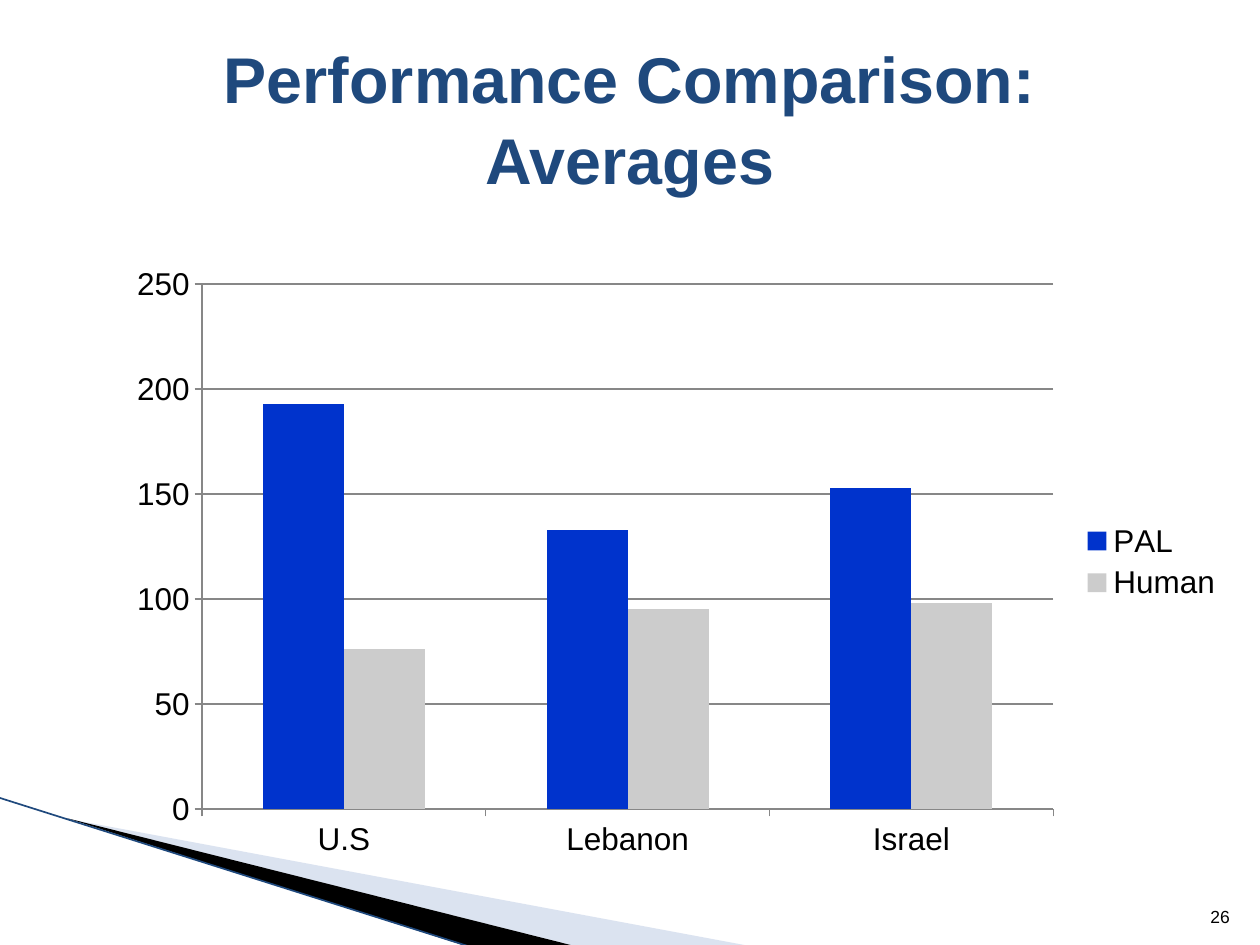
from lxml import etree
from pptx import Presentation
from pptx.chart.data import CategoryChartData
from pptx.dml.color import RGBColor
from pptx.enum.chart import XL_CHART_TYPE, XL_LEGEND_POSITION, XL_TICK_MARK
from pptx.enum.shapes import MSO_CONNECTOR
from pptx.enum.text import MSO_ANCHOR, PP_ALIGN
from pptx.oxml import parse_xml
from pptx.oxml.ns import nsdecls, qn
from pptx.util import Pt

NAVY = RGBColor(0x1F, 0x49, 0x7D)
PALE = RGBColor(0xA7, 0xB9, 0xDB)
BLACK = RGBColor(0, 0, 0)
BLUE = RGBColor(0x00, 0x33, 0xCC)
SILVER = RGBColor(0xCC, 0xCC, 0xCC)
GRID = RGBColor(0x87, 0x87, 0x87)
FONT = "Arial"


def write(tf, text, size, color=BLACK, bold=False, align=PP_ALIGN.LEFT,
          anchor=MSO_ANCHOR.MIDDLE, spacing=1.0):
    tf.word_wrap = True
    tf.vertical_anchor = anchor
    p = tf.paragraphs[0]
    p.alignment = align
    p.line_spacing = spacing
    r = p.add_run()
    r.text = text
    r.font.name, r.font.size, r.font.bold = FONT, Pt(size), bold
    r.font.color.rgb = color


class SlideBuilder:
    def __init__(self, s):
        self.s = s

    def wedge(self, points, color, opacity=100):
        """Draw a filled outline; opacity is a percentage."""
        pts = [(Pt(x), Pt(y)) for x, y in points]
        fb = self.s.shapes.build_freeform(*pts[0], scale=1.0)
        fb.add_line_segments(pts[1:], close=True)
        sp = fb.convert_to_shape()
        sp.shadow.inherit = False
        sp.fill.solid()
        sp.fill.fore_color.rgb = color
        sp.line.fill.background()
        if opacity < 100:
            clr = sp.fill._xPr.find(".//" + qn("a:srgbClr"))
            etree.SubElement(clr, qn("a:alpha"), val=str(opacity * 1000))

    def line(self, x1, y1, x2, y2, color, width):
        cx = self.s.shapes.add_connector(
            MSO_CONNECTOR.STRAIGHT, Pt(x1), Pt(y1), Pt(x2), Pt(y2))
        cx.line.color.rgb = color
        cx.line.width = Pt(width)
        etree.SubElement(cx._element.spPr, qn("a:effectLst"))

    def title(self, text, x, y, w, h, **fmt):
        sp = self.s.shapes.title
        sp.left, sp.top, sp.width, sp.height = Pt(x), Pt(y), Pt(w), Pt(h)
        write(sp.text_frame, text, **fmt)

    def text(self, text, x, y, w, h, **fmt):
        sp = self.s.shapes.add_textbox(Pt(x), Pt(y), Pt(w), Pt(h))
        write(sp.text_frame, text, **fmt)

    def column_chart(self, cats, series, x, y, w, h, plot):
        """Add clustered columns; plot is the inner area as chart fractions."""
        data = CategoryChartData()
        data.categories = cats
        for name, values, _ in series:
            data.add_series(name, values)
        chart = self.s.shapes.add_chart(
            XL_CHART_TYPE.COLUMN_CLUSTERED, Pt(x), Pt(y), Pt(w), Pt(h), data).chart
        chart.has_title = False
        chart.font.name, chart.font.size = FONT, Pt(18)
        chart.font.color.rgb = BLACK
        chart.has_legend = True
        chart.legend.position = XL_LEGEND_POSITION.RIGHT
        chart.legend.include_in_layout = False

        bars = chart.plots[0]
        bars.vary_by_categories = False
        bars.gap_width, bars.overlap = 150, 0
        for ser, (_, _, color) in zip(bars.series, series):
            ser.format.fill.solid()
            ser.format.fill.fore_color.rgb = color

        axis = chart.value_axis
        axis.minimum_scale, axis.maximum_scale, axis.major_unit = 0, 250, 50
        axis.has_major_gridlines = True
        for part in (axis, chart.category_axis, axis.major_gridlines):
            part.format.line.color.rgb = GRID
            part.format.line.width = Pt(0.75)
        for ax in (axis, chart.category_axis):
            ax.major_tick_mark = XL_TICK_MARK.OUTSIDE

        area = chart._chartSpace.chart.plotArea
        for old in area.findall(qn("c:layout")):
            area.remove(old)
        sizes = "".join(f'<c:{k} val="{v}"/>' for k, v in zip("xywh", plot))
        area.insert(0, parse_xml(
            f'<c:layout {nsdecls("c")}><c:manualLayout><c:layoutTarget val="inner"/>'
            f'<c:xMode val="edge"/><c:yMode val="edge"/>{sizes}'
            '</c:manualLayout></c:layout>'))


def main():
    prs = Presentation()
    prs.slide_width, prs.slide_height = Pt(720), Pt(540)
    b = SlideBuilder(prs.slides.add_slide(prs.slide_layouts[5]))

    b.wedge([(39, 468), (428, 540.5), (328, 540.5)], PALE, opacity=40)
    b.wedge([(38, 467.5), (328, 540.5), (266, 540.5)], BLACK)
    b.line(0, 456, 267, 540.5, NAVY, 0.95)

    b.title("Performance Comparison: Averages", 36, 21.6, 648, 90, size=36.9,
            color=NAVY, bold=True, align=PP_ALIGN.CENTER, spacing=1.05)
    b.column_chart(
        ["U.S", "Lebanon", "Israel"],
        [("PAL", [193, 133, 153], BLUE), ("Human", [76, 95, 98], SILVER)],
        66.2, 145.4, 640, 351.4, plot=(0.077, 0.048, 0.76, 0.854))
    b.text("26", 681, 504.7, 28.8, 28.8, size=10, align=PP_ALIGN.RIGHT,
           anchor=MSO_ANCHOR.BOTTOM)
    prs.save("out.pptx")


if __name__ == "__main__":
    main()
